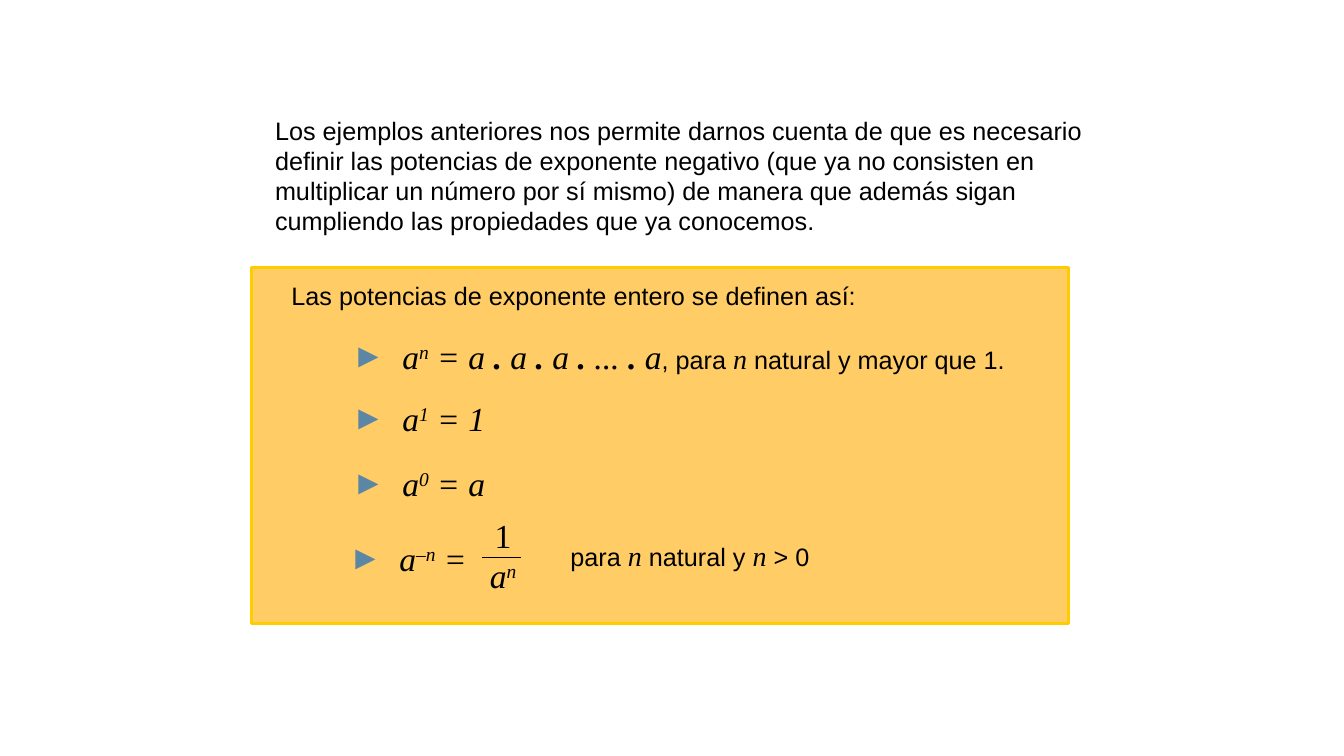
from lxml.etree import SubElement
from pptx import Presentation
from pptx.dml.color import RGBColor
from pptx.enum.shapes import MSO_CONNECTOR, MSO_SHAPE
from pptx.enum.text import MSO_ANCHOR, MSO_AUTO_SIZE, PP_ALIGN
from pptx.oxml.ns import qn
from pptx.util import Inches, Pt

BLACK = RGBColor(0x00, 0x00, 0x00)
PANEL_FILL = RGBColor(0xFF, 0xCC, 0x66)
PANEL_LINE = RGBColor(0xFF, 0xCC, 0x00)
BULLET_BLUE = RGBColor(0x5C, 0x87, 0xA4)

SLIDE_WIDTH, SLIDE_HEIGHT = 13.33, 7.5
CELL = Inches(0.1)  # grid of tenth-inch columns and rows

# Kinds of text
PLAIN = dict(font="Arial", size=18)
LETTER = dict(font="Times New Roman", size=20, italic=True)
NUMBER = dict(font="Times New Roman", size=24)
MATH = dict(NUMBER, italic=True)
DOT = dict(MATH, bold=True)
POWER = dict(MATH, raised=True)


def grid(*cells):
    """Turn columns and rows into slide lengths."""
    return [round(cell * CELL) for cell in cells]


def write(paragraph, text, font, size, italic=False, bold=False, raised=False):
    run = paragraph.add_run()
    run.text = text
    run.font.name = font
    run.font.size = Pt(size)
    run.font.italic = italic
    run.font.bold = bold
    run.font.color.rgb = BLACK
    if raised:
        run.font._element.set("baseline", "30000")


def write_all(paragraph, parts, alignment=PP_ALIGN.LEFT):
    paragraph.alignment = alignment
    for text, style in parts:
        write(paragraph, text, **style)


def prepare_frame(shape, *cells):
    shape.left, shape.top, shape.width, shape.height = grid(*cells)
    frame = shape.text_frame
    frame.word_wrap = True
    frame.auto_size = MSO_AUTO_SIZE.NONE
    frame.vertical_anchor = MSO_ANCHOR.TOP
    return frame


def add_text(slide, cells, parts):
    box = slide.shapes.add_textbox(*grid(*cells))
    frame = prepare_frame(box, *cells)
    write_all(frame.paragraphs[0], parts)


def add_panel(slide, *cells):
    panel = slide.shapes.add_shape(MSO_SHAPE.RECTANGLE, *grid(*cells))
    panel.shadow.inherit = False
    panel.fill.solid()
    panel.fill.fore_color.rgb = PANEL_FILL
    panel.line.color.rgb = PANEL_LINE
    panel.line.width = Pt(2.25)
    # The panel lies behind the placeholders
    slide.shapes.title._element.addprevious(panel._element)


def set_bullet(paragraph, text_indent):
    properties = paragraph._p.get_or_add_pPr()
    properties.set("marL", str(Inches(text_indent)))
    properties.set("indent", str(-Inches(0.5)))
    color = SubElement(properties, qn("a:buClr"))
    SubElement(color, qn("a:srgbClr"), val=str(BULLET_BLUE))
    SubElement(properties, qn("a:buFont"), typeface="Times New Roman")
    SubElement(properties, qn("a:buChar"), char="►")


def fill_definitions(placeholder, cells, definitions):
    frame = prepare_frame(placeholder, *cells)
    for index, (space, text_indent, parts) in enumerate(definitions):
        paragraph = frame.paragraphs[0] if index == 0 else frame.add_paragraph()
        paragraph.space_before = Pt(space)
        set_bullet(paragraph, text_indent)
        write_all(paragraph, parts)


def add_fraction(slide, cells, numerator, denominator, bar):
    box = slide.shapes.add_textbox(*grid(*cells))
    frame = prepare_frame(box, *cells)
    write_all(frame.paragraphs[0], numerator, PP_ALIGN.CENTER)
    write_all(frame.add_paragraph(), denominator, PP_ALIGN.CENTER)
    line = slide.shapes.add_connector(MSO_CONNECTOR.STRAIGHT, *grid(*bar))
    line.line.color.rgb = BLACK
    line.line.width = Pt(0.75)
    SubElement(line._element.spPr, qn("a:effectLst"))


def main():
    presentation = Presentation()
    presentation.slide_width = Inches(SLIDE_WIDTH)
    presentation.slide_height = Inches(SLIDE_HEIGHT)
    slide = presentation.slides.add_slide(presentation.slide_layouts[1])

    # Introduction
    add_text(slide, (26.3, 10.9, 87.6, 13), [(
        "Los ejemplos anteriores nos permite darnos cuenta de que es necesario "
        "definir las potencias de exponente negativo (que ya no consisten en "
        "multiplicar un número por sí mismo) de manera que además sigan "
        "cumpliendo las propiedades que ya conocemos.", PLAIN)])

    # Panel with its heading
    add_panel(slide, 24.9, 26.5, 81.1, 35.4)
    heading = prepare_frame(slide.shapes.title, 27.9, 27.3, 70, 4)
    write_all(heading.paragraphs[0],
              [("Las potencias de exponente entero se definen así:", PLAIN)])

    # Definitions: space before, text indent, parts
    product = [("a", MATH), ("n", POWER), (" = a ", MATH)]
    for factor in (" a ", " a ", " ... ", " a"):
        product += [(".", DOT), (factor, MATH)]
    product += [(", para ", PLAIN), ("n", LETTER),
                (" natural y mayor que 1.", PLAIN)]
    fill_definitions(slide.placeholders[1], (33.6, 32.8, 71, 25), [
        (0, 0.53, product),
        (15.6, 0.53, [("a", MATH), ("1", POWER), (" = 1", MATH)]),
        (17.8, 0.53, [("a", MATH), ("0", POWER), (" = a", MATH)]),
        (25, 0.5, [("a", MATH), ("–n", POWER), (" =", MATH)]),
    ])

    # Negative exponent: fraction and condition
    add_fraction(slide, (47.5, 50.6, 4.8, 9.1), [("1", NUMBER)],
                 [("a", MATH), ("n", POWER)], bar=(47.8, 55.3, 51.7, 55.3))
    add_text(slide, (55.6, 52.9, 30, 4), [
        ("para ", PLAIN), ("n", LETTER), (" natural y ", PLAIN),
        ("n", LETTER), (" > 0", PLAIN)])

    presentation.save("out.pptx")


if __name__ == "__main__":
    main()
